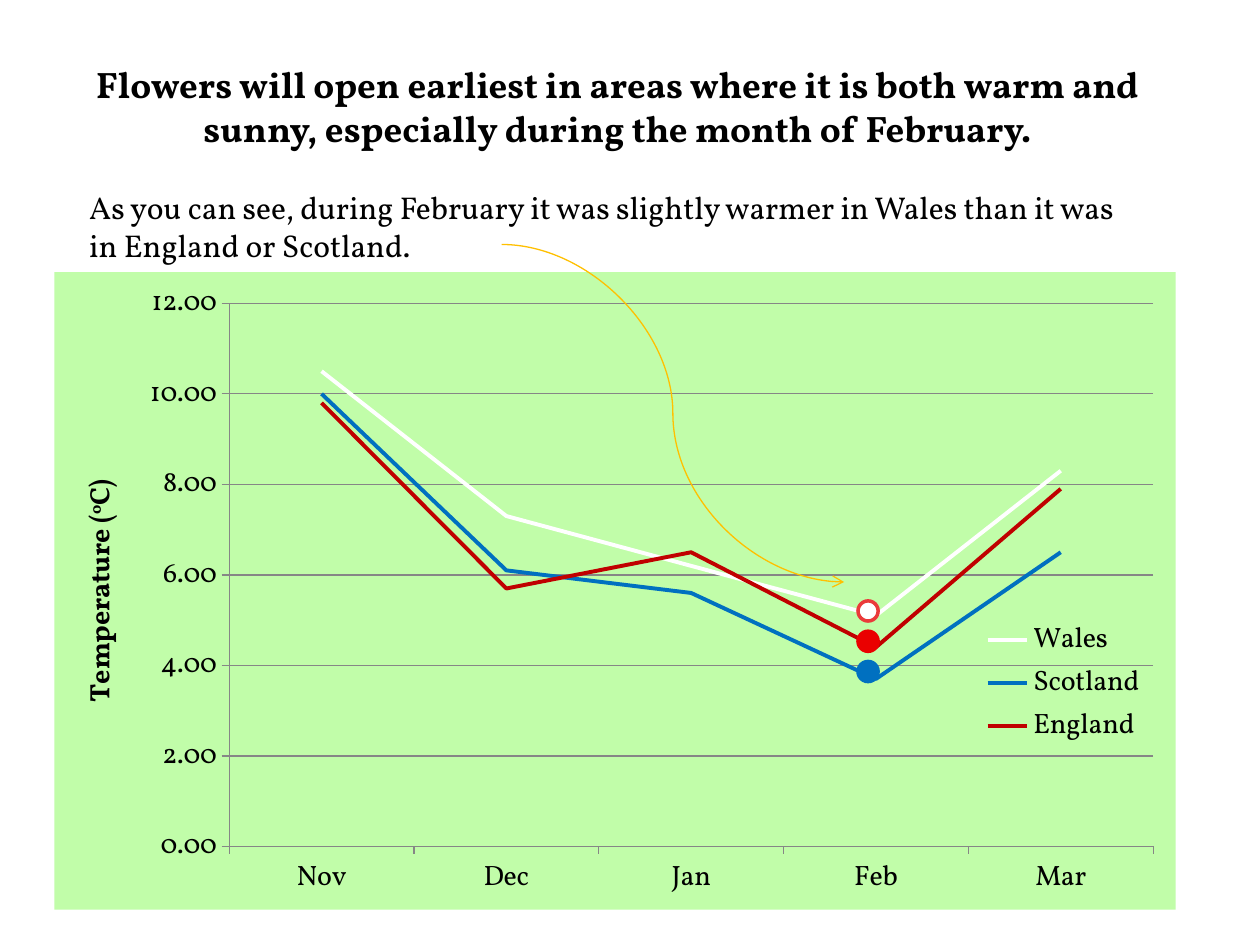
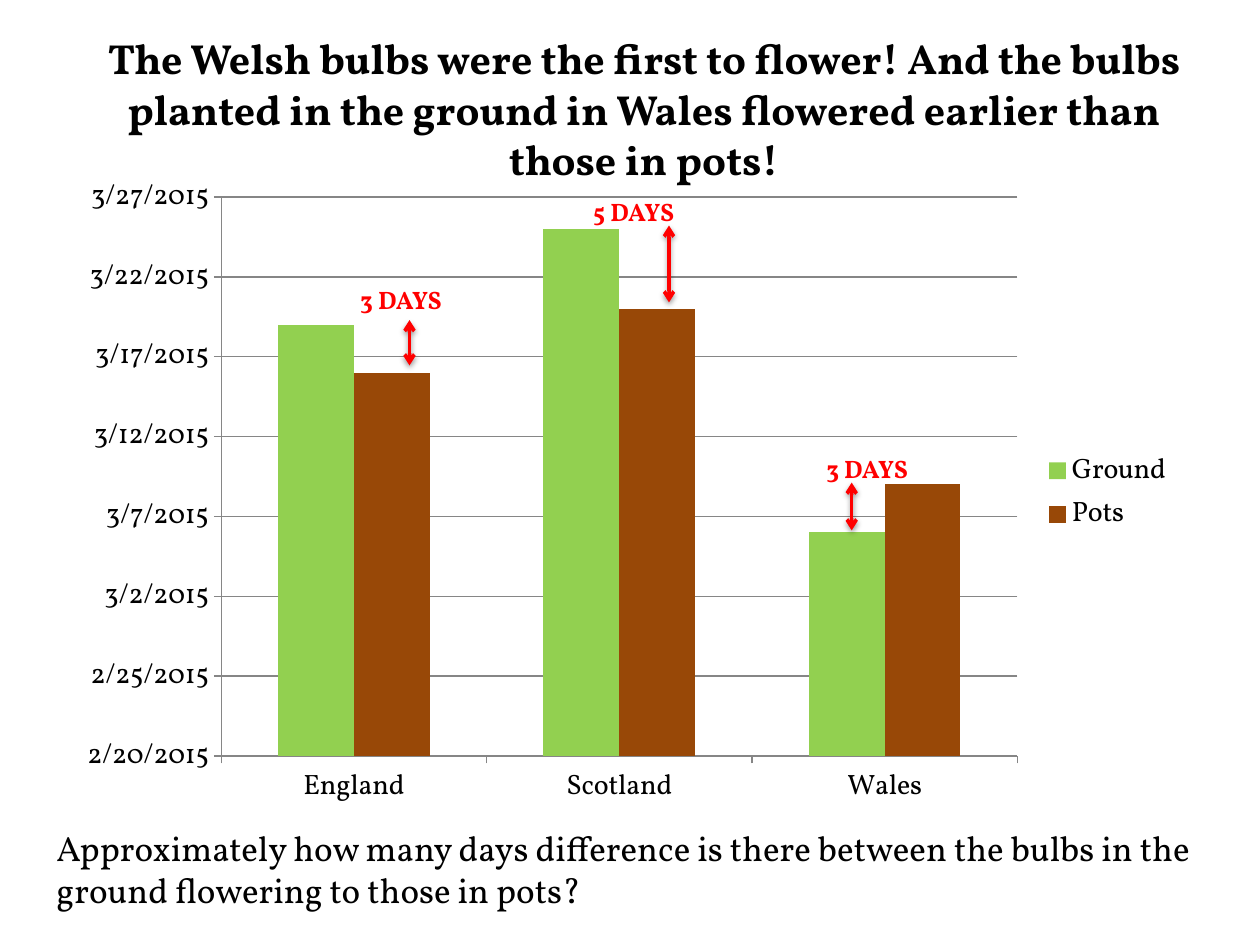
from lxml import etree
from pptx import Presentation
from pptx import util as u
from pptx.chart import data as cd
from pptx.dml.color import RGBColor
from pptx.enum import chart as ce, shapes, text
from pptx.oxml import parse_xml
from pptx.oxml.ns import nsdecls, qn

FONT = "Vollkorn"
BLACK = RGBColor(0, 0, 0)
WHITE = RGBColor(0xFF, 0xFF, 0xFF)
GRID = RGBColor(0x86, 0x86, 0x86)
BLUE = RGBColor(0x00, 0x70, 0xC0)
DARK_RED = RGBColor(0xC0, 0x00, 0x00)
DOT_RED = RGBColor(0xEA, 0x00, 0x00)
DOT_RING = RGBColor(0xEA, 0x3A, 0x3A)
AMBER = RGBColor(0xFF, 0xC0, 0x00)
RED = RGBColor(0xFF, 0x00, 0x00)
GROUND = RGBColor(0x92, 0xD0, 0x50)
POTS = RGBColor(0x98, 0x48, 0x07)
PALE_GREEN = "C1FDA9"

Pt = u.Pt
FEB_20 = 42055  # date serial of 2/20/2015


def add_text(s, box, paragraphs):
    """Add a text box; each paragraph is (text, alignment, space before, font values)."""
    sp = s.shapes.add_textbox(*map(Pt, box))
    tf = sp.text_frame
    tf.word_wrap = True
    tf.auto_size = text.MSO_AUTO_SIZE.SHAPE_TO_FIT_TEXT
    for i, (words, align, before, values) in enumerate(paragraphs):
        p = tf.paragraphs[0] if i == 0 else tf.add_paragraph()
        p.alignment, p.space_before = align, Pt(before)
        r = p.add_run()
        r.text = words
        r.font.name = FONT
        r.font.color.rgb = BLACK
        for key, value in values.items():
            if key == "rgb":
                r.font.color.rgb = value
            else:
                setattr(r.font, key, value)
    return sp


def set_layout(parent, index, box, target=""):
    """Replace the layout of a chart part; box is in fractions of the chart."""
    for old in parent.findall(qn("c:layout")):
        parent.remove(old)
    x, y, w, h = box
    parent.insert(index, parse_xml(
        f'<c:layout {nsdecls("c")}><c:manualLayout>{target}'
        '<c:xMode val="edge"/><c:yMode val="edge"/>'
        f'<c:x val="{x}"/><c:y val="{y}"/><c:w val="{w}"/><c:h val="{h}"/>'
        "</c:manualLayout></c:layout>"))


prs = Presentation()
prs.slide_width, prs.slide_height = Pt(720), Pt(540)
s1, s2 = (prs.slides.add_slide(prs.slide_layouts[6]) for _ in range(2))
LEFT, CENTER = text.PP_ALIGN.LEFT, text.PP_ALIGN.CENTER

# Charts
chart_specs = [
    dict(slide=s1, kind=ce.XL_CHART_TYPE.LINE, box=(31, 155.5, 640.8, 364.3),
         cats=["Nov", "Dec", "Jan", "Feb", "Mar"],
         series=[("Wales", [10.5, 7.3, 6.2, 5.1, 8.3], WHITE),
                 ("Scotland", [10, 6.1, 5.6, 3.7, 6.5], BLUE),
                 ("England", [9.8, 5.7, 6.5, 4.4, 7.9], DARK_RED)],
         axis=dict(minimum_scale=0, maximum_scale=12, major_unit=2),
         fmt="#,##0.00", plot=(0.156, 0.049, 0.824, 0.852)),
    dict(slide=s2, kind=ce.XL_CHART_TYPE.COLUMN_CLUSTERED, box=(36.7, 94.3, 640.8, 374.4),
         cats=["England", "Scotland", "Wales"],
         series=[("Ground", [FEB_20 + d for d in (27, 33, 14)], GROUND),
                 ("Pots", [FEB_20 + d for d in (24, 28, 17)], POTS)],
         axis=dict(minimum_scale=FEB_20, maximum_scale=FEB_20 + 35, major_unit=5),
         fmt="m/d/yyyy", plot=(0.14, 0.049, 0.71, 0.853)),
]
charts = []
for spec in chart_specs:
    data = cd.CategoryChartData(number_format=spec["fmt"])
    data.categories = spec["cats"]
    for name, values, _ in spec["series"]:
        data.add_series(name, values)
    chart = spec["slide"].shapes.add_chart(spec["kind"], *map(Pt, spec["box"]), data).chart
    charts.append(chart)
    chart.has_title = False
    chart.font.name, chart.font.size, chart.font.color.rgb = FONT, Pt(10), BLACK

    val, cat = chart.value_axis, chart.category_axis
    for key, value in spec["axis"].items():
        setattr(val, key, value)
    val.tick_labels.number_format = spec["fmt"]
    val.tick_labels.number_format_is_linked = False
    val.has_major_gridlines = True
    for ax in (val, cat):
        ax.major_tick_mark = ce.XL_TICK_MARK.OUTSIDE
        ax.tick_labels.font.size = Pt(16)
    for line in (val.format.line, cat.format.line, val.major_gridlines.format.line):
        line.color.rgb, line.width = GRID, Pt(0.75)

    chart.has_legend = True
    chart.legend.position = ce.XL_LEGEND_POSITION.RIGHT
    chart.legend.include_in_layout = False
    chart.legend.font.size = Pt(16)

    plot = chart.plots[0]
    plot.vary_by_categories = False
    for ser, (_, _, color) in zip(plot.series, spec["series"]):
        if spec["kind"] == ce.XL_CHART_TYPE.LINE:
            ser.smooth = False
            ser.format.line.color.rgb, ser.format.line.width = color, Pt(2.25)
        else:
            ser.format.fill.solid()
            ser.format.fill.fore_color.rgb = color
    set_layout(chart._chartSpace.chart.plotArea, 0, spec["plot"],
               '<c:layoutTarget val="inner"/>')

temperature, flowering = charts
flowering.plots[0].gap_width, flowering.plots[0].overlap = 150, 0

# Temperature chart: green ground, legend low over the plot, axis title
temperature._chartSpace.chart.addnext(parse_xml(
    f'<c:spPr {nsdecls("c", "a")}><a:solidFill><a:srgbClr val="{PALE_GREEN}"/></a:solidFill>'
    "<a:ln><a:noFill/></a:ln></c:spPr>"))
temperature.legend.include_in_layout = True
set_layout(temperature.legend._element, 1, (0.82, 0.54, 0.16, 0.21))
p = temperature.value_axis.axis_title.text_frame.paragraphs[0]
for words, baseline in (("Temperature (", 0), ("o", 30000), ("C)", 0)):
    r = p.add_run()
    r.text = words
    r.font.name, r.font.size, r.font.bold = FONT, Pt(16), True
    r.font.color.rgb = BLACK
    if baseline:
        r._r.get_or_add_rPr().set("baseline", str(baseline))

# Titles and body text
add_text(s1, (43.9, 31.7, 617.8, 123.8), [
    ("Flowers will open earliest in areas where it is both warm and sunny, "
     "especially during the month of February.", CENTER, 0, dict(size=Pt(21), bold=True)),
    ("As you can see, during February it was slightly warmer in Wales than it was "
     "in England or Scotland.", LEFT, 21.7, dict(size=Pt(18)))])
add_text(s2, (41.8, 15.1, 652.3, 94.3), [
    ("The Welsh bulbs were the first to flower! And the bulbs planted in the ground "
     "in Wales flowered earlier than those in pots!", CENTER, 0, dict(size=Pt(24), bold=True))])
add_text(s2, (25.2, 468.7, 686.2, 55.4), [
    ("Approximately how many days difference is there between the bulbs in the ground "
     "flowering to those in pots?", LEFT, 0, dict(size=Pt(20)))])

# February dots
for top, fill, ring in ((343.4, WHITE, DOT_RING), (378, BLUE, BLUE), (360.7, DOT_RED, DOT_RED)):
    sp = s1.shapes.add_shape(shapes.MSO_SHAPE.OVAL, *map(Pt, (490.3, top, 11.5, 11.5)))
    sp.shadow.inherit = False
    sp.fill.solid()
    sp.fill.fore_color.rgb = fill
    sp.line.color.rgb, sp.line.width = ring, Pt(2)

# Curved pointer to February, and double arrows for the gaps in days
CURVE, STRAIGHT = shapes.MSO_CONNECTOR.CURVE, shapes.MSO_CONNECTOR.STRAIGHT
arrows = [
    (s1, CURVE, (286.6, 139.7, 482.4, 332.6), AMBER, 0.75, ["tailEnd"]),
    *((s2, STRAIGHT, (x, top, x, bottom), RED, 2, ["headEnd", "tailEnd"])
      for x, top, bottom in ((234, 182.9, 208.8), (382.3, 128.9, 172.8), (486.7, 275.8, 303.1))),
]
for s, kind, ends, color, width, heads in arrows:
    cx = s.shapes.add_connector(kind, *map(Pt, ends))
    cx.line.color.rgb, cx.line.width = color, Pt(width)
    spPr = cx._element.spPr
    for head in heads:
        etree.SubElement(spPr.find(qn("a:ln")), qn(f"a:{head}")).set("type", "arrow")
    effects = etree.SubElement(spPr, qn("a:effectLst"))
    if kind == STRAIGHT:
        effects.append(parse_xml(
            f'<a:outerShdw {nsdecls("a")} blurRad="{Pt(3.1)}" dist="{Pt(1.6)}" dir="5400000" '
            'rotWithShape="0"><a:srgbClr val="000000"><a:alpha val="38000"/></a:srgbClr>'
            "</a:outerShdw>"))

# Day labels in small capitals
for words, left, top, width in (("3 days", 198.7, 155.5, 73.4), ("5 days", 331.9, 105.1, 73.4),
                                ("3 days", 465.1, 252, 85)):
    sp = add_text(s2, (left, top, width, 28.8),
                  [(words, LEFT, 0, dict(size=Pt(18), bold=True, rgb=RED))])
    sp.text_frame.paragraphs[0].runs[0]._r.get_or_add_rPr().set("cap", "small")

prs.save("out.pptx")
